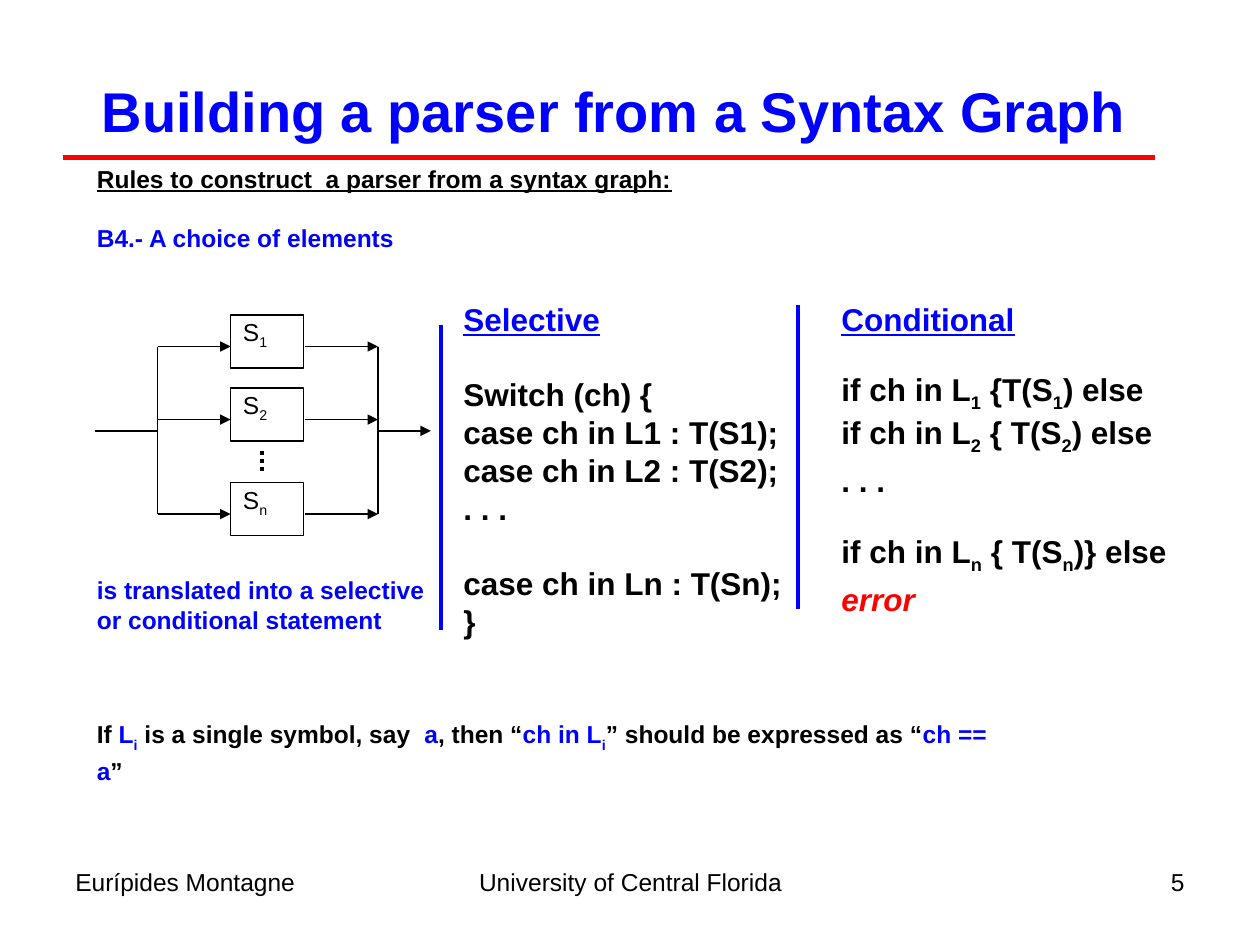
from dataclasses import dataclass

from lxml import etree
from pptx import Presentation
from pptx.dml.color import RGBColor
from pptx.enum.dml import MSO_LINE
from pptx.enum.shapes import MSO_CONNECTOR, MSO_SHAPE
from pptx.enum.text import MSO_ANCHOR, PP_ALIGN
from pptx.oxml.ns import qn
from pptx.util import Inches, Pt

LEFT, CENTER, RIGHT = PP_ALIGN.LEFT, PP_ALIGN.CENTER, PP_ALIGN.RIGHT
TOP, MIDDLE = MSO_ANCHOR.TOP, MSO_ANCHOR.MIDDLE
STRAIGHT = MSO_CONNECTOR.STRAIGHT
RECT = MSO_SHAPE.RECTANGLE
DOTS = MSO_LINE.ROUND_DOT


@dataclass(frozen=True)
class Theme:
    font: str = "Arial"
    black: RGBColor = RGBColor(0, 0, 0)
    blue: RGBColor = RGBColor(0, 0, 255)
    red: RGBColor = RGBColor(255, 0, 0)
    head: int = 32
    code: int = 18
    body: int = 14
    thin: float = 0.75
    bold: float = 2.25
    rule: float = 3
    pitch: float = 1.2


THEME = Theme()


@dataclass(frozen=True)
class Bit:
    text: str
    color: RGBColor = THEME.black
    sub: bool = False
    under: bool = False
    slant: bool = False


@dataclass(frozen=True)
class Para:
    bits: tuple[Bit, ...]
    before: float = 0
    after: float = 0
    pitch: float = THEME.pitch


@dataclass(frozen=True)
class Wire:
    x1: float
    y1: float
    x2: float
    y2: float
    color: RGBColor = THEME.black
    width: float = THEME.thin
    arrow: bool = False
    dots: bool = False


def style(run, bit: Bit, size: int, bold: bool) -> None:
    font = run.font
    font.name, font.size, font.bold = THEME.font, Pt(size), bold
    font.color.rgb = bit.color
    if bit.under:
        font.underline = True
    if bit.slant:
        font.italic = True
    if bit.sub:
        run._r.get_or_add_rPr().set("baseline", "-25000")


def fill_text(frame, paras: list[Para], size: int, bold: bool, align=LEFT) -> None:
    frame.word_wrap = True
    frame.vertical_anchor = TOP
    for i, para in enumerate(paras):
        line = frame.add_paragraph() if i else frame.paragraphs[0]
        line.alignment = align
        line.line_spacing = Pt(round(size * para.pitch, 1))
        line.space_before, line.space_after = Pt(para.before), Pt(para.after)
        for bit in para.bits:
            run = line.add_run()
            run.text = bit.text
            style(run, bit, size, bold)


def add_text(slide, at: tuple, paras: list[Para], size: int, bold=True, align=LEFT):
    box = slide.shapes.add_textbox(*map(Inches, at))
    fill_text(box.text_frame, paras, size, bold, align)
    return box


def add_wire(slide, wire: Wire) -> None:
    ends = map(Inches, (wire.x1, wire.y1, wire.x2, wire.y2))
    link = slide.shapes.add_connector(STRAIGHT, *ends)
    link.line.color.rgb = wire.color
    link.line.width = Pt(wire.width)
    if wire.dots:
        link.line.dash_style = DOTS
    if wire.arrow:
        etree.SubElement(link.line._get_or_add_ln(), qn("a:tailEnd"), type="triangle")
    etree.SubElement(link._element.spPr, qn("a:effectLst"))


def add_node(slide, top: float, mark: str) -> None:
    node = slide.shapes.add_shape(RECT, *map(Inches, (1.83, top, 0.58, 0.42)))
    node.shadow.inherit = False
    node.fill.background()
    node.line.color.rgb = THEME.black
    node.line.width = Pt(THEME.thin)
    label = Para((Bit("S"), Bit(mark, sub=True)))
    fill_text(node.text_frame, [label], THEME.body, False)


def add_title(slide) -> None:
    title = slide.shapes.title
    title.left, title.top = Inches(0.25), Inches(0.25)
    title.width, title.height = Inches(9.25), Inches(1.25)
    frame = title.text_frame
    frame.text = "Building a parser from a Syntax Graph"
    frame.vertical_anchor = MIDDLE
    line = frame.paragraphs[0]
    line.alignment = CENTER
    style(line.runs[0], Bit("", THEME.blue), THEME.head, True)


def add_graph(slide) -> None:
    fork, join, mid = 1.25, 3, 3.42
    for top, mark in ((2.5, "1"), (3.08, "2"), (3.83, "n")):
        add_node(slide, top, mark)
        row = top + 0.25
        add_wire(slide, Wire(fork, row, 1.83, row, arrow=True))
        add_wire(slide, Wire(2.42, row, join, row, arrow=True))
    for x in (fork, join):
        add_wire(slide, Wire(x, 2.75, x, 4.08))
    add_wire(slide, Wire(0.75, mid, fork, mid))
    add_wire(slide, Wire(join, mid, 3.42, mid, arrow=True))
    add_wire(slide, Wire(2.08, 3.58, 2.08, 3.75, width=THEME.bold, dots=True))


def test_line(mark: str, open_: str, close: str, before: float = 0) -> Para:
    sub = Bit(mark, sub=True)
    bits = (Bit("if ch in L"), sub, Bit(open_), sub, Bit(close))
    return Para(bits, before, after=3)


def add_body(slide) -> None:
    blue, row = THEME.blue, THEME.body * THEME.pitch
    low = Bit("i", blue, sub=True)
    note = (
        Bit("If "), Bit("L", blue), low, Bit(" is a single symbol, say  "),
        Bit("a", blue), Bit(", then “"), Bit("ch in L", blue), low,
        Bit("” should be expressed as “"), Bit("ch == a", blue), Bit("”"),
    )
    paras = [
        Para((Bit("Rules to construct  a parser from a syntax graph:", under=True),)),
        Para((Bit("B4.- A choice of elements", blue),), before=row),
        Para((Bit("is translated into a selective", blue),), before=11 * row),
        Para((Bit("or conditional statement", blue),)),
        Para(note, before=49, pitch=1.34),
    ]
    add_text(slide, (0.67, 1.25, 7.48, 4.75), paras, THEME.body)


def add_code(slide) -> None:
    row = THEME.code * THEME.pitch
    dots = Para((Bit(". . ."),))
    switch = [
        Para((Bit("Selective", THEME.blue, under=True),)),
        Para((Bit("Switch (ch) {"),), before=row),
        Para((Bit("case ch in L1 : T(S1);"),)),
        Para((Bit("case ch in L2 : T(S2);"),)),
        dots,
        Para((Bit("case ch in Ln : T(Sn);"),), before=row),
        Para((Bit("}"),)),
    ]
    tests = [
        Para((Bit("Conditional", THEME.blue, under=True),)),
        test_line("1", " {T(S", ") else", before=row),
        test_line("2", " { T(S", ") else"),
        dots,
        test_line("n", " { T(S", ")} else", before=row),
        Para((Bit("error", THEME.red, slant=True),)),
    ]
    for at, paras in (
        ((3.58, 2.33, 2.73, 2.8), switch),
        ((6.58, 2.33, 2.81, 2.5), tests),
    ):
        box = add_text(slide, at, paras, THEME.code)
        box.text_frame.margin_right = 0
    for x, top, end in ((3.5, 2.58, 5), (6.33, 2.42, 4.83)):
        add_wire(slide, Wire(x, top, x, end, THEME.blue, THEME.bold))


def add_foot(slide) -> None:
    for left, width, text, align in (
        (0.5, 2.33, "Eurípides Montagne", LEFT),
        (3.42, 3.17, "University of Central Florida", CENTER),
        (7.17, 2.33, "5", RIGHT),
    ):
        para = Para((Bit(text),))
        add_text(slide, (left, 6.83, width, 0.52), [para], THEME.body, False, align)


def main() -> None:
    deck = Presentation()
    deck.slide_width, deck.slide_height = Inches(10), Inches(7.5)
    slide = deck.slides.add_slide(deck.slide_layouts[5])
    add_title(slide)
    add_wire(slide, Wire(0.5, 1.25, 9.17, 1.25, THEME.red, THEME.rule))
    add_body(slide)
    add_graph(slide)
    add_code(slide)
    add_foot(slide)
    deck.save("out.pptx")


if __name__ == "__main__":
    main()
